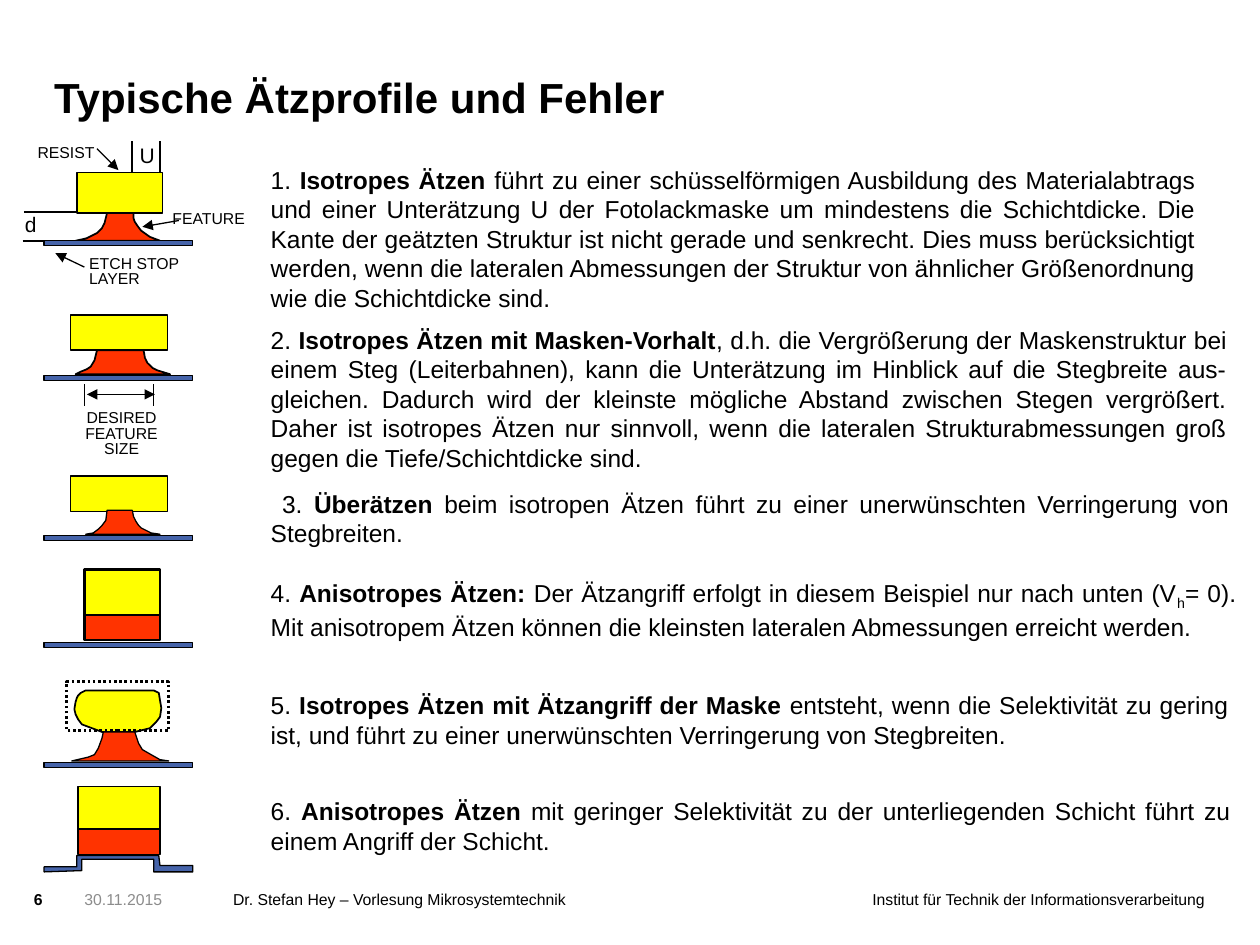
import pptx
import pptx.util
import pptx.dml.color
import pptx.enum.dml
import pptx.enum.shapes
import pptx.enum.text
import pptx.oxml

Inches = pptx.util.Inches
Pt = pptx.util.Pt
RGBColor = pptx.dml.color.RGBColor
ALIGN = pptx.enum.text.PP_ALIGN

BLACK = RGBColor(0x00, 0x00, 0x00)
GREY = RGBColor(0x8C, 0x8C, 0x8C)
RESIST = RGBColor(0xFF, 0xFF, 0x00)
FEATURE = RGBColor(0xFF, 0x33, 0x00)
LAYER = RGBColor(0x46, 0x64, 0xAA)
FONT = "Arial"

PROFILE_LEFT = 0.35
LAYER_WIDTH = 1.18
TEXT_LEFT = 2.05
DRAWING_NS = "http://schemas.openxmlformats.org/drawingml/2006/main"

ISOTROPIC_FOOT = [
    (0.25, 0.83), (0.92, 0.83), (0.84, 0.8), (0.77, 0.75), (0.74, 0.71),
    (0.72, 0.68), (0.71, 0.65), (0.71, 0.61), (0.5, 0.61), (0.48, 0.69),
    (0.46, 0.73), (0.42, 0.77), (0.38, 0.79), (0.34, 0.81), (0.3, 0.82)]
BIASED_FOOT = [
    (0.25, 0.47), (1, 0.47), (0.9, 0.44), (0.86, 0.42), (0.82, 0.38),
    (0.8, 0.34), (0.79, 0.28), (0.42, 0.28), (0.4, 0.36), (0.37, 0.41),
    (0.34, 0.43), (0.29, 0.45)]
OVERETCHED_FOOT = [
    (0.33, 0.46), (0.92, 0.46), (0.85, 0.45), (0.81, 0.43), (0.77, 0.41),
    (0.75, 0.39), (0.73, 0.36), (0.71, 0.32), (0.7, 0.27), (0.5, 0.27),
    (0.49, 0.35), (0.46, 0.39), (0.43, 0.42), (0.39, 0.45)]
ERODED_MASK = [
    (0.37, 0.07), (0.87, 0.07), (0.91, 0.09), (0.92, 0.15), (0.93, 0.21),
    (0.92, 0.28), (0.89, 0.32), (0.84, 0.37), (0.76, 0.39), (0.72, 0.4),
    (0.46, 0.4), (0.38, 0.37), (0.3, 0.34), (0.27, 0.3), (0.25, 0.26),
    (0.24, 0.22), (0.25, 0.16), (0.26, 0.13), (0.27, 0.11), (0.29, 0.09),
    (0.33, 0.07)]
ERODED_FOOT = [
    (0.47, 0.4), (0.72, 0.4), (0.75, 0.49), (0.78, 0.54), (0.85, 0.58),
    (0.92, 0.62), (0.99, 0.63), (0.22, 0.63), (0.35, 0.6), (0.4, 0.58),
    (0.43, 0.53), (0.46, 0.45)]
ATTACKED_LAYER = [
    (0, 0.64), (0.26, 0.64), (0.26, 0.55), (0.91, 0.55), (0.92, 0.63),
    (1.18, 0.63), (1.18, 0.68), (0.87, 0.68), (0.87, 0.58), (0.3, 0.58),
    (0.3, 0.67), (0, 0.68)]

EXPLANATIONS = [
    (1.26, 7.54, 1.28, 0, "1. ", "Isotropes Ätzen",
     [" führt zu einer schüsselförmigen Ausbildung des Materialabtrags und einer Unterätzung U der "
      "Fotolackmaske um mindestens die Schichtdicke. Die Kante der geätzten Struktur ist nicht gerade "
      "und senkrecht. Dies muss berücksichtigt werden, wenn die lateralen Abmessungen der Struktur von "
      "ähnlicher Größenordnung wie die Schichtdicke sind."]),
    (2.53, 7.79, 1.28, 0, "2. ", "Isotropes Ätzen mit Masken-Vorhalt",
     [", d.h. die Vergrößerung der Maskenstruktur bei einem Steg (Leiterbahnen), kann die Unterätzung "
      "im Hinblick auf die Stegbreite aus-", "\n",
      "gleichen. Dadurch wird der kleinste mögliche Abstand zwischen Stegen vergrößert. Daher ist "
      "isotropes Ätzen nur sinnvoll, wenn die lateralen Strukturabmessungen groß gegen die "
      "Tiefe/Schichtdicke sind."]),
    (3.83, 7.81, 0.57, 0.09, "3. ", "Überätzen",
     [" beim isotropen Ätzen führt zu einer unerwünschten Verringerung von Stegbreiten."]),
    (4.54, 7.86, 0.57, 0, "4. ", "Anisotropes Ätzen:",
     [" Der Ätzangriff erfolgt in diesem Beispiel nur nach unten (V", "_h", "= 0).", "\n",
      "Mit anisotropem Ätzen können die kleinsten lateralen Abmessungen erreicht werden."]),
    (5.43, 7.8, 0.57, 0, "5. ", "Isotropes Ätzen mit Ätzangriff der Maske",
     [" entsteht, wenn die Selektivität zu gering ist, und führt zu einer unerwünschten Verringerung "
      "von Stegbreiten."]),
    (6.27, 7.82, 0.57, 0, "6. ", "Anisotropes Ätzen",
     [" mit geringer Selektivität zu der unterliegenden Schicht führt zu einem Angriff der Schicht."]),
]


def set_font(paragraph, size, color=BLACK, bold=False):
    font = paragraph.font
    font.name, font.size, font.bold = FONT, Pt(size), bold
    font.color.rgb = color


class Profile:
    def __init__(self, slide, top):
        self.shapes = slide.shapes.add_group_shape().shapes
        self.top = top

    def place(self, x, y):
        return Inches(PROFILE_LEFT + x), Inches(self.top + y)

    def paint(self, shape, fill, weight):
        shape.shadow.inherit = False
        if fill is None:
            shape.fill.background()
        else:
            shape.fill.solid()
            shape.fill.fore_color.rgb = fill
        shape.line.color.rgb = BLACK
        shape.line.width = Pt(weight)
        return shape

    def block(self, x, y, width, height, fill, weight=1):
        rectangle = pptx.enum.shapes.MSO_SHAPE.RECTANGLE
        shape = self.shapes.add_shape(rectangle, *self.place(x, y), Inches(width), Inches(height))
        return self.paint(shape, fill, weight)

    def layer(self, y):
        self.block(0, y, LAYER_WIDTH, 0.04, LAYER, 0.75)

    def outline(self, points, fill, weight=1):
        corners = [self.place(*point) for point in points]
        builder = self.shapes.build_freeform(*corners[0])
        builder.add_line_segments(corners[1:], close=True)
        self.paint(builder.convert_to_shape(), fill, weight)

    def line(self, start, end, weight=0.75, arrows=()):
        straight = pptx.enum.shapes.MSO_CONNECTOR.STRAIGHT
        connector = self.shapes.add_connector(straight, *self.place(*start), *self.place(*end))
        connector.line.color.rgb = BLACK
        connector.line.width = Pt(weight)
        for arrow in arrows:
            connector.line._get_or_add_ln().append(
                pptx.oxml.parse_xml(f'<a:{arrow} xmlns:a="{DRAWING_NS}" type="triangle"/>'))
        connector._element.spPr.append(pptx.oxml.parse_xml(f'<a:effectLst xmlns:a="{DRAWING_NS}"/>'))

    def label(self, x, y, width, height, lines, size=9, align=ALIGN.LEFT):
        frame = self.shapes.add_textbox(*self.place(x, y), Inches(width), Inches(height)).text_frame
        frame.word_wrap = False
        paragraph = frame.paragraphs[0]
        paragraph.text = "\v".join(lines)
        paragraph.alignment = align
        paragraph.line_spacing = 0.8 if len(lines) > 1 else 1.0
        set_font(paragraph, size)


def draw_isotropic(slide, top):
    profile = Profile(slide, top)
    profile.label(-0.25, 0.55, 0.2, 0.3, ["d"], 12)
    profile.label(0.66, 0, 0.33, 0.3, ["U"], 12)
    profile.line((-0.16, 0.6), (0.26, 0.6), 1)
    profile.line((-0.17, 0.83), (0.08, 0.83), 1)
    for x in (0.7, 0.92):
        profile.line((x, 0.04), (x, 0.29), 1)
    profile.block(0.26, 0.29, 0.68, 0.32, RESIST)
    profile.outline(ISOTROPIC_FOOT, FEATURE)
    profile.label(-0.15, 0, 0.75, 0.25, ["RESIST"])
    profile.label(0.92, 0.53, 0.92, 0.25, ["FEATURE"])
    profile.label(0.26, 0.91, 0.92, 0.34, ["ETCH STOP", "LAYER"])
    profile.line((0.42, 0.1), (0.59, 0.27), arrows=["tailEnd"])
    profile.line((0.78, 0.72), (1.07, 0.67), arrows=["headEnd"])
    profile.line((0.09, 0.93), (0.32, 1.04), arrows=["headEnd"])
    profile.layer(0.83)


def draw_biased_mask(slide, top):
    profile = Profile(slide, top)
    profile.block(0.21, 0, 0.77, 0.28, RESIST)
    profile.outline(BIASED_FOOT, FEATURE)
    profile.label(0.2, 0.72, 0.83, 0.46, ["DESIRED", "FEATURE", "SIZE"], align=ALIGN.CENTER)
    for x in (0.32, 0.87):
        profile.line((x, 0.55), (x, 0.72))
    profile.line((0.34, 0.63), (0.88, 0.63), arrows=["headEnd", "tailEnd"])
    profile.layer(0.48)


def draw_overetched(slide, top):
    profile = Profile(slide, top)
    profile.block(0.21, 0, 0.77, 0.28, RESIST)
    profile.outline(OVERETCHED_FOOT, FEATURE, 0.75)
    profile.layer(0.47)


def draw_anisotropic(slide, top):
    profile = Profile(slide, top)
    profile.block(0.32, 0, 0.6, 0.37, RESIST, 1.5)
    profile.block(0.32, 0.36, 0.6, 0.2, FEATURE, 1.5)
    profile.layer(0.58)


def draw_eroded_mask(slide, top):
    profile = Profile(slide, top)
    profile.outline(ERODED_MASK, RESIST)
    profile.outline(ERODED_FOOT, FEATURE, 0.75)
    former_mask = profile.block(0.18, 0, 0.81, 0.39, None, 1.5)
    former_mask.line.dash_style = pptx.enum.dml.MSO_LINE.ROUND_DOT
    profile.layer(0.64)


def draw_attacked_layer(slide, top):
    profile = Profile(slide, top)
    profile.block(0.27, 0, 0.65, 0.34, RESIST, 0.75)
    profile.block(0.27, 0.34, 0.65, 0.2, FEATURE, 0.75)
    profile.outline(ATTACKED_LAYER, LAYER, 0.75)


def add_explanation(slide, top, width, height, indent, number, term, rest):
    box = slide.shapes.add_textbox(Inches(TEXT_LEFT), Inches(top), Inches(width), Inches(height))
    box.text_frame.word_wrap = True
    paragraph = box.text_frame.paragraphs[0]
    paragraph.alignment = ALIGN.JUSTIFY
    if indent:
        paragraph._p.get_or_add_pPr().set("indent", str(Inches(indent)))
    set_font(paragraph, 14)
    for part in [number, term, *rest]:
        if part == "\n":
            paragraph.add_line_break()
            continue
        run = paragraph.add_run()
        run.text = part.removeprefix("_")
        if part == term:
            run.font.bold = True
        if part.startswith("_"):
            run.font._element.set("baseline", "-25000")


def fill_frame(frame, text, size, color=BLACK, bold=False, align=ALIGN.LEFT):
    frame.margin_left = frame.margin_right = frame.margin_top = frame.margin_bottom = 0
    frame.word_wrap = True
    frame.text = text
    frame.paragraphs[0].alignment = align
    set_font(frame.paragraphs[0], size, color, bold)


def add_title(slide, left, top, width, height):
    title = slide.shapes.title
    title.left, title.top, title.width, title.height = map(Inches, (left, top, width, height))
    fill_frame(title.text_frame, "Typische Ätzprofile und Fehler", 24, bold=True)
    title.text_frame.vertical_anchor = pptx.enum.text.MSO_ANCHOR.BOTTOM


def add_footer(slide, top):
    for left, width, text, color, bold, align in (
            (0.27, 0.36, "6", BLACK, True, ALIGN.LEFT),
            (0.67, 1.14, "30.11.2015", GREY, False, ALIGN.LEFT),
            (1.85, 2.99, "Dr. Stefan Hey – Vorlesung Mikrosystemtechnik", BLACK, False, ALIGN.LEFT),
            (6.57, 2.99, "Institut für Technik der Informationsverarbeitung", BLACK, False, ALIGN.RIGHT)):
        box = slide.shapes.add_textbox(Inches(left), Inches(top), Inches(width), Inches(0.3))
        fill_frame(box.text_frame, text, 9, color, bold, align)


def main():
    presentation = pptx.Presentation()
    presentation.slide_width, presentation.slide_height = Inches(10), Inches(7.5)
    slide = presentation.slides.add_slide(presentation.slide_layouts[5])
    add_title(slide, 0.43, 0.36, 7.56, 0.61)
    draw_isotropic(slide, 1.08)
    draw_biased_mask(slide, 2.5)
    draw_overetched(slide, 3.78)
    draw_anisotropic(slide, 4.52)
    draw_eroded_mask(slide, 5.41)
    draw_attacked_layer(slide, 6.24)
    for explanation in EXPLANATIONS:
        add_explanation(slide, *explanation)
    add_footer(slide, 7.06)
    presentation.save("out.pptx")


if __name__ == "__main__":
    main()
